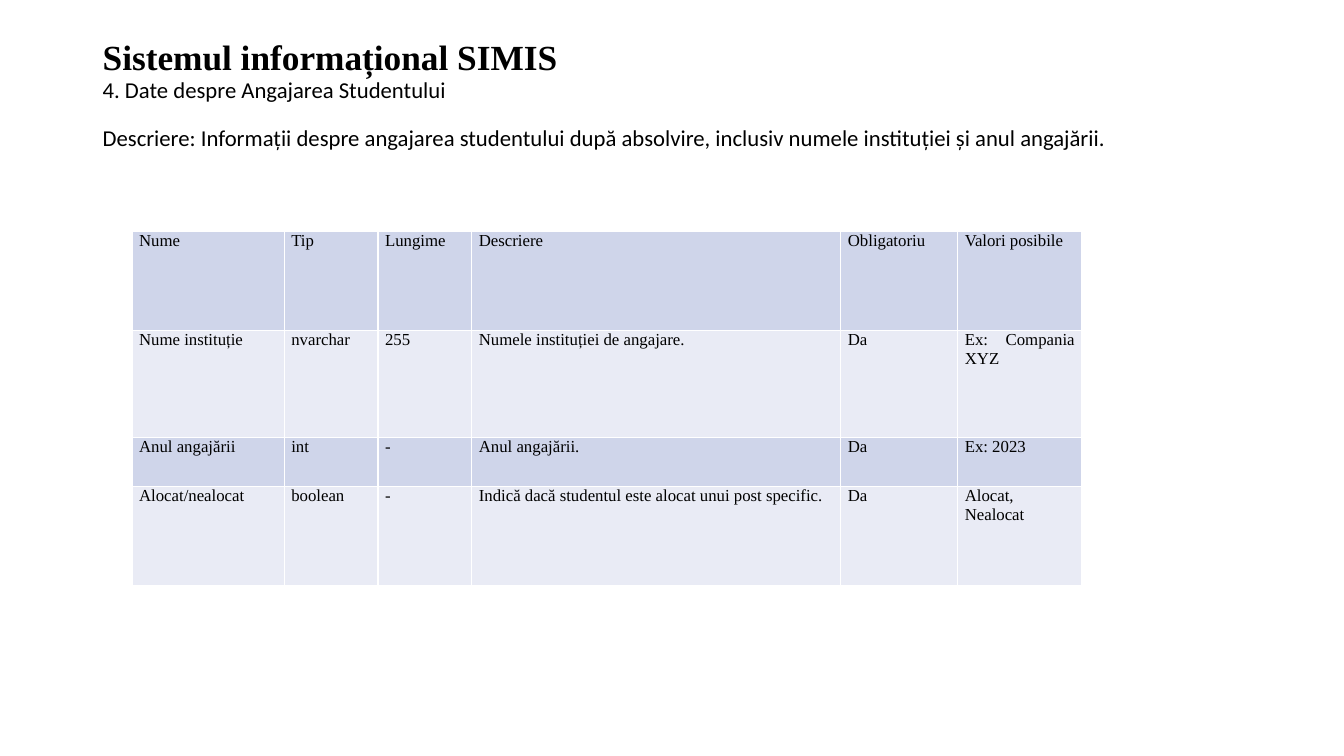
from pptx import Presentation
from pptx.dml.color import RGBColor
from pptx.enum.text import MSO_ANCHOR, PP_ALIGN
from pptx.util import Inches, Pt

COLORS = {"text": "000000", "odd_row": "CFD5EA", "even_row": "E9EBF5"}
SERIF, SANS = "Times New Roman", "Calibri"


def add_span(para, text, name, size, bold=False):
    span = para.add_run()
    span.text = text
    for key, value in {"name": name, "size": Pt(size), "bold": bold}.items():
        setattr(span.font, key, value)
    span.font.color.rgb = RGBColor.from_string(COLORS["text"])


deck = Presentation()
deck.slide_width, deck.slide_height = Inches(13.33), Inches(7.5)
page = deck.slides.add_slide(deck.slide_layouts[6])

# Heading: title, subtitle, description
heading = [
    ("Sistemul informațional SIMIS", SERIF, 25.2, True, 0),
    ("4. Date despre Angajarea Studentului", SANS, 16.2, False, 0),
    ("Descriere: Informații despre angajarea studentului după absolvire, "
     "inclusiv numele instituției și anul angajării.", SANS, 16.2, False, 17.5),
]
box = page.shapes.add_textbox(Inches(0.92), Inches(0.4), Inches(11.5), Inches(1.45))
frame = box.text_frame
for key, value in {"word_wrap": True, "margin_top": 0,
                   "vertical_anchor": MSO_ANCHOR.TOP}.items():
    setattr(frame, key, value)
for index, (text, name, size, bold, gap) in enumerate(heading):
    para = frame.add_paragraph() if index else frame.paragraphs[0]
    para.line_spacing = 0.9
    para.space_before = Pt(gap)
    add_span(para, text, name, size, bold)

# Table of data fields
fields = [
    ("Nume", "Tip", "Lungime", "Descriere", "Obligatoriu", "Valori posibile"),
    ("Nume instituție", "nvarchar", "255", "Numele instituției de angajare.",
     "Da", "Ex: Compania XYZ"),
    ("Anul angajării", "int", "-", "Anul angajării.", "Da", "Ex: 2023"),
    ("Alocat/nealocat", "boolean", "-",
     "Indică dacă studentul este alocat unui post specific.", "Da", "Alocat, Nealocat"),
]
widths = [1.51, 0.93, 0.93, 3.66, 1.16, 1.23]
heights = [0.98, 1.06, 0.49, 0.98]
table = page.shapes.add_table(len(heights), len(widths), Inches(1.31), Inches(2.3),
                              Inches(sum(widths)), Inches(sum(heights))).table
table.first_row = table.horz_banding = False
for column, width in zip(table.columns, widths):
    column.width = Inches(width)

cell_format = {"margin_left": Inches(0.07), "margin_right": Inches(0.07),
               "margin_top": 0, "margin_bottom": 0}
para_format = {"alignment": PP_ALIGN.JUSTIFY, "space_before": Pt(6), "space_after": Pt(6)}
for index, (row, height, texts) in enumerate(zip(table.rows, heights, fields)):
    row.height = Inches(height)
    band = COLORS["even_row" if index % 2 else "odd_row"]
    for cell, text in zip(row.cells, texts):
        cell.fill.solid()
        cell.fill.fore_color.rgb = RGBColor.from_string(band)
        para = cell.text_frame.paragraphs[0]
        for target, values in ((cell, cell_format), (para, para_format)):
            for key, value in values.items():
                setattr(target, key, value)
        add_span(para, text, SERIF, 12)

deck.save("out.pptx")
